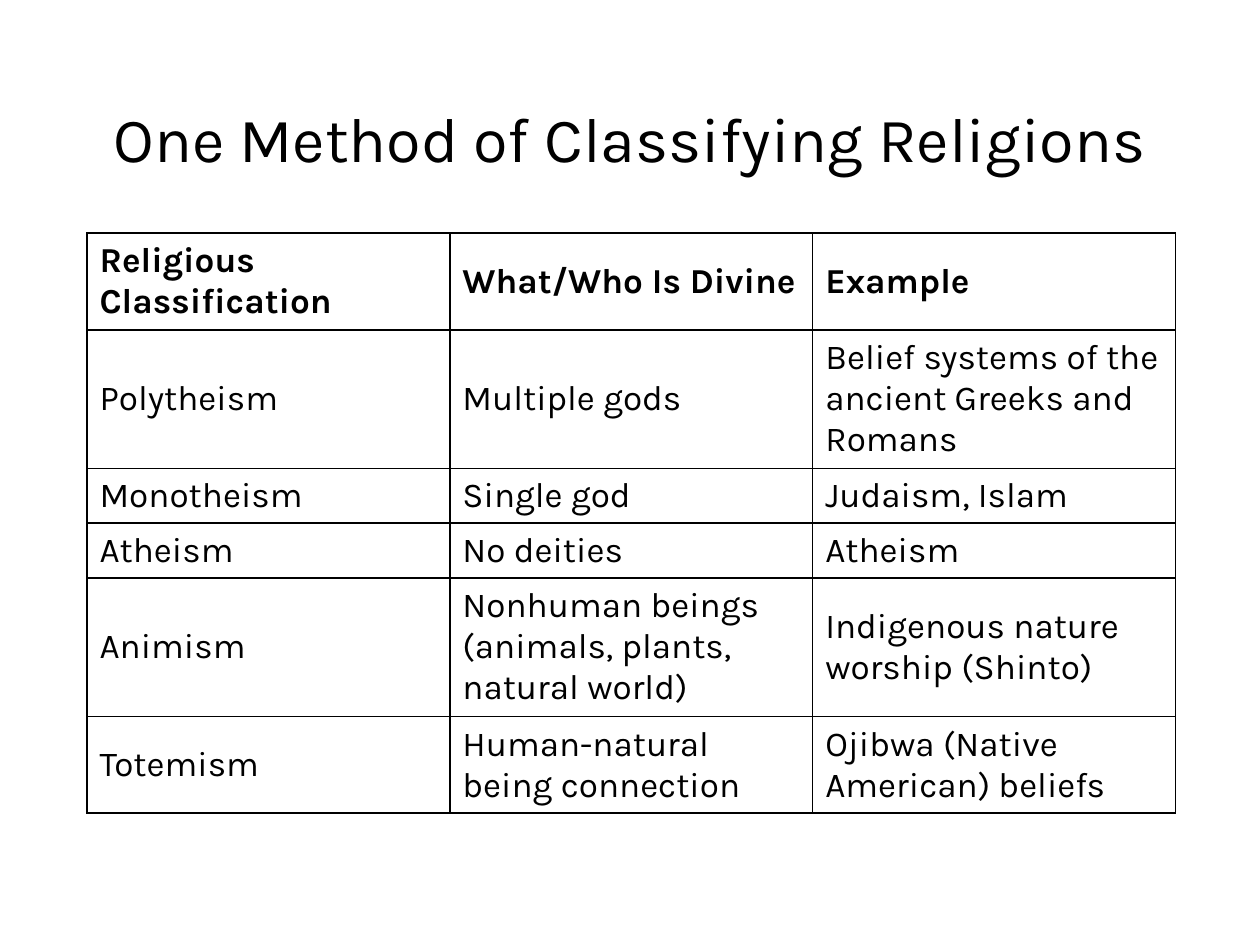
from lxml import etree
from pptx import Presentation
from pptx.dml.color import RGBColor
from pptx.enum.text import MSO_ANCHOR, PP_ALIGN
from pptx.oxml.ns import qn
from pptx.util import Inches, Pt

MIDDLE = MSO_ANCHOR.MIDDLE
CENTER = PP_ALIGN.CENTER
LEFT = PP_ALIGN.LEFT
BLACK = RGBColor(0x00, 0x00, 0x00)
TITLE_FORMAT = {"size": Pt(36), "bold": False}
HEADER_FORMAT = {"size": Pt(20), "bold": True}
BODY_FORMAT = {"size": Pt(20), "bold": False}
LINE_HEIGHT = 0.325
CELL_PADDING = 0.1
ROW_LINES = [2, 3, 1, 1, 3, 2]
RELIGIONS = [
    ["Religious Classification", "What/Who Is Divine", "Example"],
    ["Polytheism", "Multiple gods", "Belief systems of the ancient Greeks and Romans"],
    ["Monotheism", "Single god", "Judaism, Islam"],
    ["Atheism", "No deities", "Atheism"],
    ["Animism", "Nonhuman beings (animals, plants, natural world)",
     "Indigenous nature worship (Shinto)"],
    ["Totemism", "Human-natural being connection", "Ojibwa (Native American) beliefs"],
]


class SlideBuilder:
    """Draws styled elements on the current slide."""

    def __init__(self, slide, font="Karla", color=BLACK, border=Pt(1)):
        self.slide = slide
        self.font = font
        self.color = color
        self.border = border

    def add_text(self, frame, text, formats, align=LEFT):
        para = frame.paragraphs[0]
        para.alignment = align
        span = para.add_run()
        span.text = text
        span.font.color.rgb = self.color
        for name, value in {"name": self.font, **formats}.items():
            setattr(span.font, name, value)
        return para

    def title(self, text, left, top, width, height):
        box = self.slide.shapes.add_textbox(
            Inches(left), Inches(top), Inches(width), Inches(height))
        frame = box.text_frame
        frame.word_wrap = True
        frame.vertical_anchor = MIDDLE
        self.add_text(frame, text, TITLE_FORMAT, CENTER).line_spacing = 0.9

    def outline(self, cell):
        properties = cell._tc.get_or_add_tcPr()
        for position, side in enumerate(("lnL", "lnR", "lnT", "lnB")):
            line = etree.Element(qn(f"a:{side}"), w=str(self.border))
            fill = etree.SubElement(line, qn("a:solidFill"))
            etree.SubElement(fill, qn("a:srgbClr"), val=str(self.color))
            properties.insert(position, line)

    def table(self, rows, heights, left, top, column_width):
        columns = len(rows[0])
        table = self.slide.shapes.add_table(
            len(rows), columns, Inches(left), Inches(top),
            Inches(column_width * columns), Inches(sum(heights))).table
        table.horz_banding = False
        for column in table.columns:
            column.width = Inches(column_width)
        for index, texts in enumerate(rows):
            table.rows[index].height = Inches(heights[index])
            formats = BODY_FORMAT if index else HEADER_FORMAT
            for cell, text in zip(table.rows[index].cells, texts):
                cell.vertical_anchor = MIDDLE
                cell.fill.background()
                self.add_text(cell.text_frame, text, formats)
                self.outline(cell)


def main():
    deck = Presentation()
    deck.slide_width = Inches(10)
    deck.slide_height = Inches(7.5)
    page = SlideBuilder(deck.slides.add_slide(deck.slide_layouts[6]))
    page.title("One Method of Classifying Religions", 0.69, 0.4, 8.62, 1.45)
    heights = [CELL_PADDING + LINE_HEIGHT * lines for lines in ROW_LINES]
    page.table(RELIGIONS, heights, 0.69, 1.85, 2.88)
    deck.save("out.pptx")


if __name__ == "__main__":
    main()
